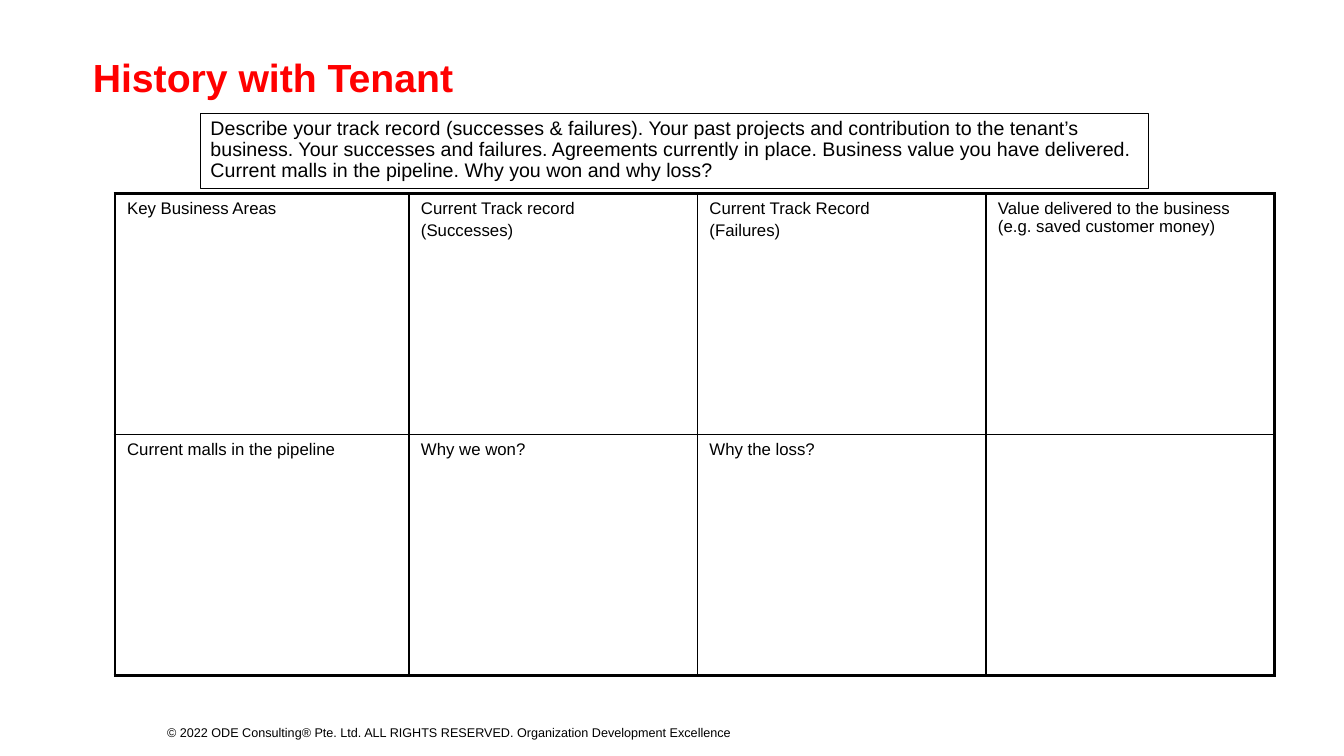
from lxml import etree
from pptx import Presentation
from pptx.dml.color import RGBColor
from pptx.enum.shapes import MSO_SHAPE as Shape
from pptx.enum.text import MSO_ANCHOR as Anchor, PP_ALIGN as Align
from pptx.oxml.ns import qn
from pptx.util import Pt

BLACK = RGBColor(0, 0, 0)
RED = RGBColor(0xFF, 0, 0)
THIN, THICK = 1, 2.25


def set_text(paragraph, text, size, color=BLACK, bold=False):
    paragraph.text = text
    paragraph.alignment = Align.LEFT
    font = paragraph.font
    font.name, font.size, font.bold = "Arial", Pt(size), bold
    font.color.rgb = color


def add_border(cell, side, width):
    """Draw one side of a cell; side is L, R, T or B."""
    properties = cell._tc.get_or_add_tcPr()
    line = etree.SubElement(properties, qn(f"a:ln{side}"), w=str(Pt(width)))
    fill = etree.SubElement(line, qn("a:solidFill"))
    etree.SubElement(fill, qn("a:srgbClr"), val=str(BLACK))


presentation = Presentation()
presentation.slide_width, presentation.slide_height = Pt(960), Pt(540)
slide = presentation.slides.add_slide(presentation.slide_layouts[5])

# Footer
footer = slide.shapes.add_textbox(Pt(112.3), Pt(514.1), Pt(530.6), Pt(18))
footer.text_frame.word_wrap = True
footer.text_frame.vertical_anchor = Anchor.MIDDLE
set_text(
    footer.text_frame.paragraphs[0],
    "© 2022 ODE Consulting® Pte. Ltd. ALL RIGHTS RESERVED. Organization Development Excellence",
    9,
)

# Instructions
instructions = slide.shapes.add_shape(Shape.RECTANGLE, Pt(143.3), Pt(81.2), Pt(676.8), Pt(53.4))
instructions.shadow.inherit = False
instructions.fill.background()
instructions.line.color.rgb = BLACK
instructions.line.width = Pt(0.75)
instructions.text_frame.word_wrap = True
instructions.text_frame.vertical_anchor = Anchor.TOP
paragraph = instructions.text_frame.paragraphs[0]
set_text(
    paragraph,
    "Describe your track record (successes & failures). Your past projects and contribution "
    "to the tenant’s business. Your successes and failures. Agreements currently in place. "
    "Business value you have delivered. Current malls in the pipeline. Why you won and why loss?",
    14,
)
paragraph.line_spacing = 0.9

# Title
title = slide.shapes.title
title.left, title.top, title.width, title.height = Pt(66.3), Pt(28.8), Pt(828), Pt(56.9)
frame = title.text_frame
frame.margin_left = frame.margin_right = frame.margin_top = frame.margin_bottom = 0
frame.word_wrap = True
frame.vertical_anchor = Anchor.MIDDLE
set_text(frame.paragraphs[0], "History with Tenant", 28, RED, True)
frame.paragraphs[0].line_spacing = 0.9

# Track record table
track_record = [
    [
        ["Key Business Areas"],
        ["Current Track record", "(Successes)"],
        ["Current Track Record", "(Failures)"],
        ["Value delivered to the business (e.g. saved customer money)"],
    ],
    [["Current malls in the pipeline"], ["Why we won?"], ["Why the loss?"], []],
]
column_widths = [209.9, 206.1, 206.1, 206.1]
row_height = 172.2
last_row, last_column = len(track_record) - 1, len(column_widths) - 1

table = slide.shapes.add_table(
    len(track_record), len(column_widths),
    Pt(82.2), Pt(138.4), Pt(sum(column_widths)), Pt(row_height * len(track_record)),
).table
table.first_row = table.horz_banding = False
for column, width in zip(table.columns, column_widths):
    column.width = Pt(width)

for row, entries in enumerate(track_record):
    table.rows[row].height = Pt(row_height)
    for column, lines in enumerate(entries):
        cell = table.cell(row, column)
        cell.margin_left = cell.margin_right = Pt(8.64)
        cell.margin_top = cell.margin_bottom = Pt(3.6)
        outer_sides = {
            "L": column == 0,
            "R": column == last_column,
            "T": row == 0,
            "B": row == last_row,
        }
        for side, is_outer in outer_sides.items():
            add_border(cell, side, THICK if is_outer else THIN)
        cell.fill.background()
        for index, line in enumerate(lines):
            if index == 0:
                paragraph = cell.text_frame.paragraphs[0]
            else:
                paragraph = cell.text_frame.add_paragraph()
                paragraph.space_before = Pt(2.4)
            set_text(paragraph, line, 12)

presentation.save("out.pptx")
